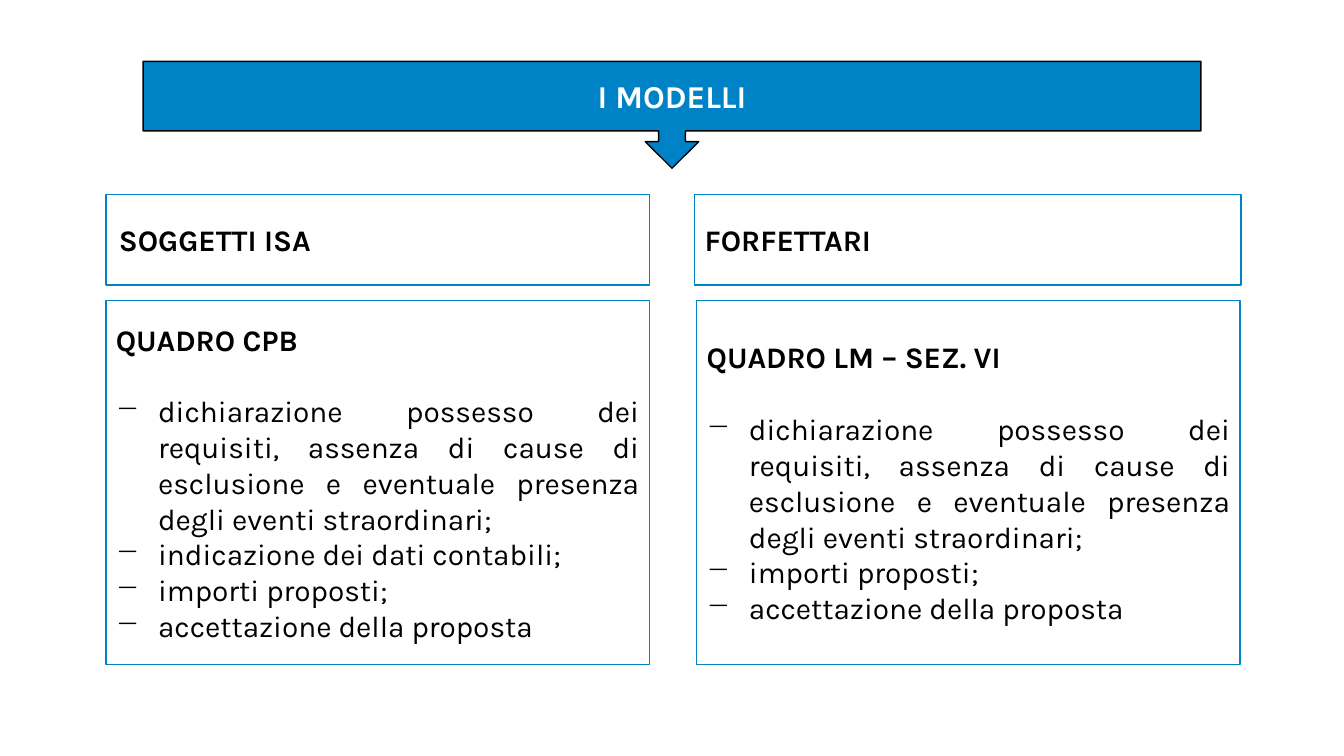
from lxml import etree
from pptx import Presentation
from pptx.dml.color import RGBColor
from pptx.enum.shapes import MSO_SHAPE
from pptx.enum.text import MSO_ANCHOR, MSO_AUTO_SIZE, PP_ALIGN
from pptx.oxml.ns import qn
from pptx.util import Inches, Pt

RECTANGLE = MSO_SHAPE.RECTANGLE
CALLOUT = MSO_SHAPE.DOWN_ARROW_CALLOUT
MIDDLE = MSO_ANCHOR.MIDDLE
NO_AUTOFIT = MSO_AUTO_SIZE.NONE
CENTER, JUSTIFY = PP_ALIGN.CENTER, PP_ALIGN.JUSTIFY

COLORS = {"blue": "0082C6", "white": "FFFFFF", "black": "000000"}
FONT = "Karla"
TITLE_SIZE, TEXT_SIZE = 22.7, 21.3
LINE_HEIGHT = 25.7
HANGING = 0.42

# Rows shared by both columns: top, height
HEADER_ROW = (1.93, 0.9)
DETAIL_ROW = (2.98, 3.61)
BANNER = (1.42, 0.61, 10.49)

REQUIREMENTS = ("dichiarazione possesso dei requisiti, assenza di cause di "
                "esclusione e eventuale presenza degli eventi straordinari;")
AMOUNTS = "importi proposti;"
ACCEPTANCE = "accettazione della proposta"


def color(name):
    return RGBColor.from_string(COLORS[name])


def add_box(page, kind, left, top, width, height, line, fill=None):
    box = page.shapes.add_shape(kind, Inches(left), Inches(top),
                                Inches(width), Inches(height))
    box.shadow.inherit = False
    if fill:
        box.fill.solid()
        box.fill.fore_color.rgb = color(fill)
    else:
        box.fill.background()
    box.line.color.rgb = color(line)
    box.line.width = Pt(1)
    box.text_frame.word_wrap = True
    box.text_frame.vertical_anchor = MIDDLE
    return box


def format_para(para, size, color_name, bold, align):
    para.alignment = align
    for span in para.runs:
        span.font.name = FONT
        span.font.size = Pt(size)
        span.font.bold = bold
        span.font.color.rgb = color(color_name)


def add_dash(para):
    properties = para._p.get_or_add_pPr()
    properties.set("marL", str(Inches(HANGING)))
    properties.set("indent", str(-Inches(HANGING)))
    etree.SubElement(properties, qn("a:buChar")).set("char", "−")


def add_banner(page, text):
    left, top, width = BANNER
    add_box(page, CALLOUT, left, top, width, 1.06, "black", "blue")
    title = page.shapes.title
    title.left, title.top = Inches(left), Inches(top)
    title.width, title.height = Inches(width), Inches(0.69)
    frame = title.text_frame
    frame.text = text
    frame.auto_size = NO_AUTOFIT
    frame.vertical_anchor = MIDDLE
    format_para(frame.paragraphs[0], TITLE_SIZE, "white", True, CENTER)
    # Bring the title in front of the callout
    title.element.getparent().append(title.element)


def add_header(page, left, width, inset, text):
    box = add_box(page, RECTANGLE, left, HEADER_ROW[0], width, HEADER_ROW[1],
                  "blue", "white")
    frame = box.text_frame
    frame.margin_left = frame.margin_right = Inches(inset)
    frame.text = text
    format_para(frame.paragraphs[0], TEXT_SIZE, "black", True, JUSTIFY)


def add_detail(page, left, width, heading, items):
    box = add_box(page, RECTANGLE, left, DETAIL_ROW[0], width, DETAIL_ROW[1],
                  "blue")
    frame = box.text_frame
    frame.text = "\n".join([heading, *items])
    for index, para in enumerate(frame.paragraphs):
        format_para(para, TEXT_SIZE, "black", index == 0, JUSTIFY)
        if index == 0:
            para.space_after = Pt(LINE_HEIGHT)
        else:
            add_dash(para)


def main():
    deck = Presentation()
    deck.slide_width, deck.slide_height = Inches(13.33), Inches(7.5)
    page = deck.slides.add_slide(deck.slide_layouts[5])

    # Left column
    add_header(page, 1.05, 5.39, 0.13, "SOGGETTI ISA")
    add_detail(page, 1.05, 5.39, "QUADRO CPB",
               [REQUIREMENTS, "indicazione dei dati contabili;",
                AMOUNTS, ACCEPTANCE])

    # Right column
    add_header(page, 6.89, 5.42, 0.1, "FORFETTARI")
    add_detail(page, 6.91, 5.39, "QUADRO LM – SEZ. VI",
               [REQUIREMENTS, AMOUNTS, ACCEPTANCE])

    # Title banner
    add_banner(page, "I MODELLI")
    deck.save("out.pptx")


if __name__ == "__main__":
    main()
